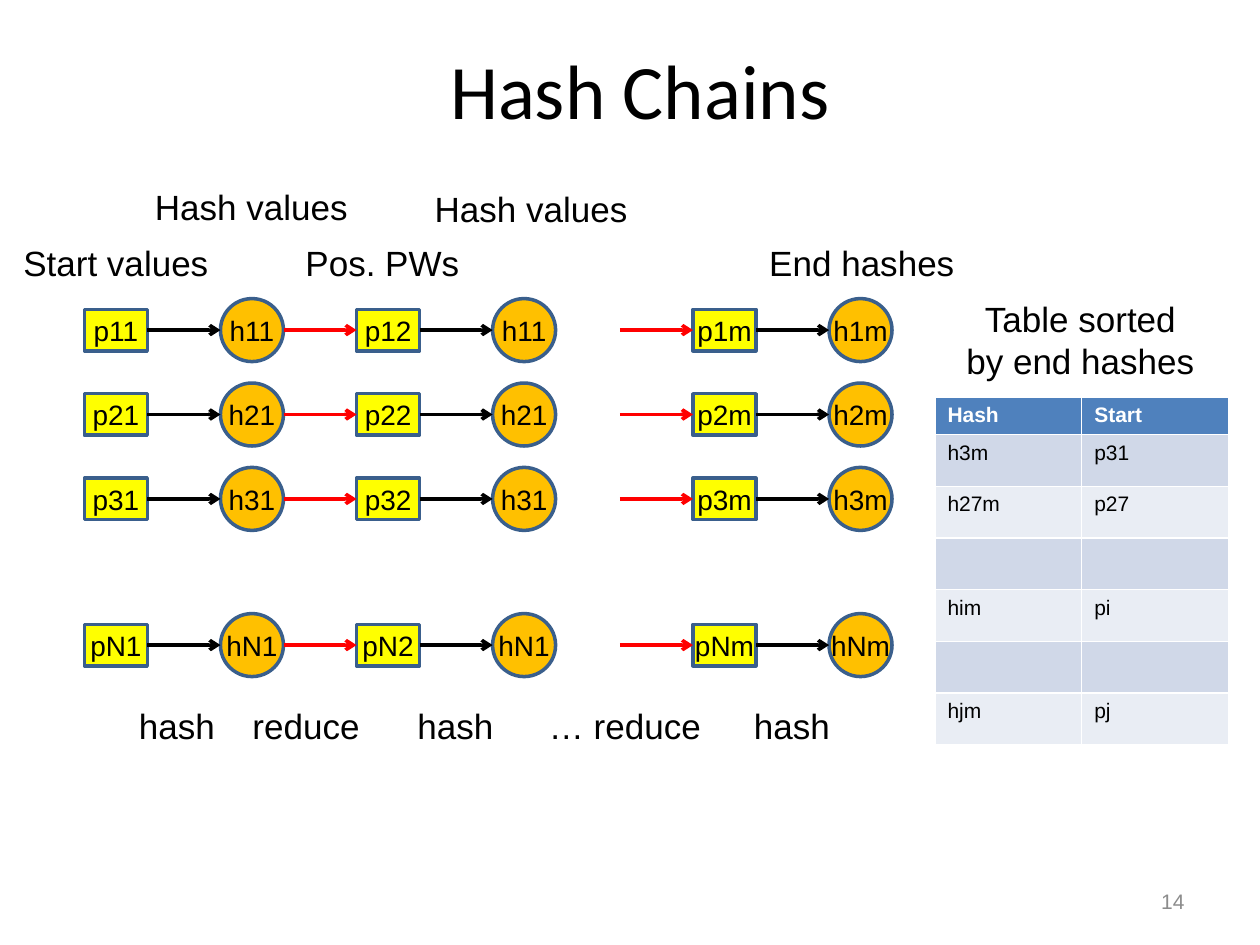
from dataclasses import dataclass

from lxml import etree
from pptx import Presentation
from pptx import util as u
from pptx.dml.color import RGBColor
from pptx.enum import shapes, text
from pptx.oxml.ns import qn
from pptx.slide import Slide

BLACK = RGBColor(0x00, 0x00, 0x00)
WHITE = RGBColor(0xFF, 0xFF, 0xFF)
GRAY = RGBColor(0x8C, 0x8C, 0x8C)
RED = RGBColor(0xFF, 0x00, 0x00)
YELLOW = RGBColor(0xFF, 0xFF, 0x00)
ORANGE = RGBColor(0xFF, 0xC0, 0x00)
OUTLINE = RGBColor(0x3A, 0x5F, 0x8C)
HEADER = RGBColor(0x4F, 0x81, 0xBD)
BANDS = (RGBColor(0xD0, 0xD8, 0xE8), RGBColor(0xE9, 0xED, 0xF4))

CHAIN_ROWS = {"1": 2.62, "2": 3.29, "3": 3.96, "N": 5.12}
CHAIN_STEPS = [("1", "1", 0.67), ("2", "1", 2.83), ("m", "m", 5.5)]
NODE, PASSWORD_HEIGHT, GAP = 0.5, 0.33, 0.58

LABELS = [
    ("Start values", 0.08, 1.87, 1.68),
    ("Hash values", 1.12, 1.42, 1.75),
    ("Pos. PWs", 2.32, 1.87, 1.43),
    ("Hash values", 3.34, 1.44, 1.75),
    ("End hashes", 6, 1.87, 1.68),
    ("hash", 1, 5.54, 0.81),
    ("reduce", 1.9, 5.54, 1.06),
    ("hash", 3.21, 5.54, 0.81),
    ("… reduce", 4.25, 5.54, 1.42),
    ("hash", 5.88, 5.54, 0.81),
]
SORTED_ROWS = [
    ("Hash", "Start"), ("h3m", "p31"), ("h27m", "p27"), ("", ""),
    ("him", "pi"), ("", ""), ("hjm", "pj"),
]


@dataclass
class Painter:
    """Draws styled elements on the current slide."""

    page: Slide
    font: str = "Arial"
    stroke: float = 2

    def style(self, para, size, color=BLACK, align=text.PP_ALIGN.CENTER, font=None, bold=False):
        para.alignment = align
        para.font.name = font or self.font
        para.font.size = u.Pt(size)
        para.font.color.rgb = color
        para.font.bold = bold

    def label(self, words, left, top, width, height=0.44, size=20,
              anchor=text.MSO_ANCHOR.TOP, wrap=False, **look):
        box = self.page.shapes.add_textbox(*map(u.Inches, (left, top, width, height)))
        frame = box.text_frame
        frame.text = words
        frame.word_wrap = wrap
        frame.vertical_anchor = anchor
        for para in frame.paragraphs:
            self.style(para, size, **look)

    def node(self, kind, words, left, middle, height, fill):
        shape = self.page.shapes.add_shape(
            kind, *map(u.Inches, (left, middle - height / 2, NODE, height)))
        shape.shadow.inherit = False
        shape.fill.solid()
        shape.fill.fore_color.rgb = fill
        shape.line.color.rgb = OUTLINE
        shape.line.width = u.Pt(self.stroke)
        frame = shape.text_frame
        frame.text = words
        frame.word_wrap = False
        frame.margin_left = frame.margin_right = 0
        frame.vertical_anchor = text.MSO_ANCHOR.MIDDLE
        self.style(frame.paragraphs[0], 16)
        return shape

    def arrow(self, left, right, middle, color, source=None, target=None):
        line = self.page.shapes.add_connector(
            shapes.MSO_CONNECTOR.STRAIGHT, *map(u.Inches, (left, middle, right, middle)))
        line.line.color.rgb = color
        line.line.width = u.Pt(self.stroke)
        etree.SubElement(line.line._get_or_add_ln(), qn("a:tailEnd"), type="arrow")
        etree.SubElement(line._element.spPr, qn("a:effectLst"))
        if source is not None:
            line.begin_connect(source, 3)
        if target is not None:
            line.end_connect(target, 1)

    def table(self, rows, left, top, width, header_height, row_height):
        height = header_height + row_height * (len(rows) - 1)
        table = self.page.shapes.add_table(
            len(rows), len(rows[0]), *map(u.Inches, (left, top, width, height))).table
        for r, words in enumerate(rows):
            is_header = r == 0
            table.rows[r].height = u.Inches(header_height if is_header else row_height)
            for c, word in enumerate(words):
                cell = table.cell(r, c)
                cell.text = word
                cell.fill.solid()
                cell.fill.fore_color.rgb = HEADER if is_header else BANDS[(r - 1) % 2]
                self.style(cell.text_frame.paragraphs[0], 12, WHITE if is_header else BLACK,
                           text.PP_ALIGN.LEFT, bold=is_header)


def main():
    deck = Presentation()
    deck.slide_width, deck.slide_height = u.Inches(10), u.Inches(7.5)
    painter = Painter(deck.slides.add_slide(deck.slide_layouts[6]))
    middle_anchor = text.MSO_ANCHOR.MIDDLE

    painter.label("Hash Chains", 0.33, 0.08, 9.5, 1.25, 44, middle_anchor, True, font="Calibri")
    painter.label("14", 7.17, 6.95, 2.33, 0.4, 12, middle_anchor, True,
                  color=GRAY, align=text.PP_ALIGN.RIGHT)

    for row, middle in CHAIN_ROWS.items():
        for step, (password_step, hash_step, left) in enumerate(CHAIN_STEPS):
            password = painter.node(shapes.MSO_SHAPE.RECTANGLE, f"p{row}{password_step}",
                                    left, middle, PASSWORD_HEIGHT, YELLOW)
            right = left + NODE
            painter.node(shapes.MSO_SHAPE.OVAL, f"h{row}{hash_step}",
                         right + GAP, middle, NODE, ORANGE)
            painter.arrow(right, right + GAP, middle, BLACK, source=password)
            if step > 0:
                painter.arrow(left - GAP, left, middle, RED, target=password)

    for label in LABELS:
        painter.label(*label)
    painter.label("Table sorted\nby end hashes", 7.56, 2.31, 2.03, 0.77)
    painter.table(SORTED_ROWS, 7.42, 3.15, 2.33, 0.3, 0.41)
    deck.save("out.pptx")


if __name__ == "__main__":
    main()
